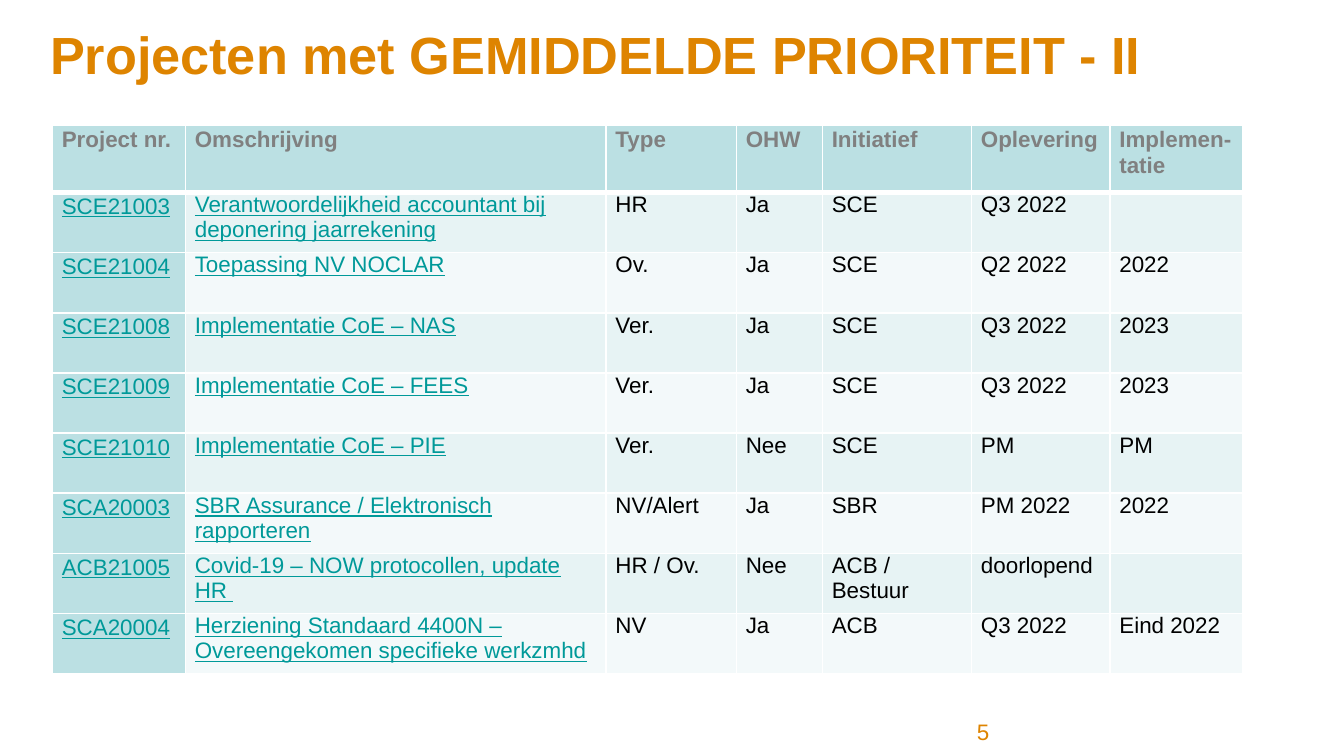
"""Build a slide listing the medium-priority projects in a table."""
from dataclasses import dataclass

from lxml import etree
from pptx import Presentation
from pptx.dml.color import RGBColor
from pptx.enum.text import MSO_ANCHOR
from pptx.oxml.ns import qn
from pptx.slide import Slide
from pptx.table import _Cell
from pptx.util import Inches, Length, Pt

MIDDLE = MSO_ANCHOR.MIDDLE
TOP = MSO_ANCHOR.TOP

WHITE = RGBColor(0xFF, 0xFF, 0xFF)
BLACK = RGBColor(0x00, 0x00, 0x00)
ORANGE = RGBColor(0xDE, 0x84, 0x00)
GRAY = RGBColor(0x80, 0x80, 0x80)
TEAL = RGBColor(0x00, 0x99, 0x99)
HEADER_FILL = RGBColor(0xBB, 0xE0, 0xE3)
ODD_FILL = RGBColor(0xE7, 0xF3, 0xF4)
EVEN_FILL = RGBColor(0xF3, 0xF9, 0xFA)

FONT = "Arial"
SLIDE_WIDTH = Inches(10)
SLIDE_HEIGHT = Length(SLIDE_WIDTH * 9 // 16)

COLUMN_PERCENTS = (9.9, 31.3, 9.7, 6.4, 11.1, 10.3, 9.9)
HEADER_PERCENT = 8.92
ROW_PERCENT = 7.96

HEADINGS = ("Project nr.", "Omschrijving", "Type", "OHW", "Initiatief", "Oplevering", "Implemen-tatie")
PROJECTS = (
    ("SCE21003", "Verantwoordelijkheid accountant bij deponering jaarrekening",
     "HR", "Ja", "SCE", "Q3 2022", ""),
    ("SCE21004", "Toepassing NV NOCLAR", "Ov.", "Ja", "SCE", "Q2 2022", "2022"),
    ("SCE21008", "Implementatie CoE – NAS", "Ver.", "Ja", "SCE", "Q3 2022", "2023"),
    ("SCE21009", "Implementatie CoE – FEES", "Ver.", "Ja", "SCE", "Q3 2022", "2023"),
    ("SCE21010", "Implementatie CoE – PIE", "Ver.", "Nee", "SCE", "PM", "PM"),
    ("SCA20003", "SBR Assurance / Elektronisch rapporteren",
     "NV/Alert", "Ja", "SBR", "PM 2022", "2022"),
    ("ACB21005", "Covid-19 – NOW protocollen, update HR ",
     "HR / Ov.", "Nee", "ACB / Bestuur", "doorlopend", ""),
    ("SCA20004", "Herziening Standaard 4400N – Overeengekomen specifieke werkzmhd",
     "NV", "Ja", "ACB", "Q3 2022", "Eind 2022"),
)


@dataclass(frozen=True)
class Box:
    """A place on the slide, in percent of its width and height."""
    left: float
    top: float
    width: float
    height: float

    def lengths(self) -> tuple[Length, Length, Length, Length]:
        """Return left, top, width and height as lengths."""
        return across(self.left), down(self.top), across(self.width), down(self.height)


@dataclass(frozen=True)
class TextStyle:
    """The look of a run of text."""
    color: RGBColor
    size: float = 12
    bold: bool = False
    underline: bool = False


@dataclass(frozen=True)
class Label:
    """A line of text with its place and style."""
    text: str
    box: Box
    style: TextStyle
    anchor: MSO_ANCHOR


HEADER_STYLE = TextStyle(GRAY, bold=True)
LINK_STYLE = TextStyle(TEAL, underline=True)
BODY_STYLE = TextStyle(BLACK)

LABELS = (
    Label("Projecten met GEMIDDELDE PRIORITEIT - II", Box(2.74, 1.78, 89.8, 10.67),
          TextStyle(ORANGE, size=28, bold=True), MIDDLE),
    Label("5", Box(71.7, 94.1, 17.7, 3.91), TextStyle(ORANGE), TOP),
)
TABLE_BOX = Box(3.9, 16.53, sum(COLUMN_PERCENTS), HEADER_PERCENT + len(PROJECTS) * ROW_PERCENT)


def across(percent: float) -> Length:
    """Return a percentage of the slide's width."""
    return Length(round(SLIDE_WIDTH * percent / 100))


def down(percent: float) -> Length:
    """Return a percentage of the slide's height."""
    return Length(round(SLIDE_HEIGHT * percent / 100))


def style_runs(paragraph, style: TextStyle) -> None:
    """Apply a text style to every run of a paragraph."""
    for run in paragraph.runs:
        run.font.name = FONT
        run.font.size = Pt(style.size)
        run.font.bold = style.bold
        run.font.underline = style.underline
        run.font.color.rgb = style.color


def draw_label(slide: Slide, label: Label) -> None:
    """Draw a text box."""
    text_frame = slide.shapes.add_textbox(*label.box.lengths()).text_frame
    text_frame.word_wrap = True
    text_frame.vertical_anchor = label.anchor
    text_frame.text = label.text
    style_runs(text_frame.paragraphs[0], label.style)


def set_borders(cell: _Cell, top: float, bottom: float) -> None:
    """Give a cell white borders, with widths in points."""
    properties = cell._tc.get_or_add_tcPr()
    widths = {"a:lnL": 1, "a:lnR": 1, "a:lnT": top, "a:lnB": bottom}
    for position, (tag, width) in enumerate(widths.items()):
        line = etree.Element(qn(tag), w=str(Pt(width)))
        fill = etree.SubElement(line, qn("a:solidFill"))
        etree.SubElement(fill, qn("a:srgbClr"), val=str(WHITE))
        properties.insert(position, line)


def draw_cell(cell: _Cell, text: str, row: int, column: int) -> None:
    """Fill in and format one table cell."""
    is_header, is_number = row == 0, column == 0
    cell.margin_left = cell.margin_right = Inches(0.07)
    cell.margin_top = cell.margin_bottom = 0
    cell.fill.solid()
    band = ODD_FILL if row % 2 else EVEN_FILL
    cell.fill.fore_color.rgb = HEADER_FILL if is_header or is_number else band
    set_borders(cell, top=3 if row == 1 else 1, bottom=3 if is_header else 1)
    cell.text_frame.text = text
    paragraph = cell.text_frame.paragraphs[0]
    if is_header or is_number:
        paragraph.line_spacing = 1.07
    if is_number and not is_header:
        properties = paragraph._p.get_or_add_pPr()
        properties.set("marL", str(Inches(0.25)))
        properties.set("indent", str(-Inches(0.25)))
    body_style = LINK_STYLE if column < 2 else BODY_STYLE
    style_runs(paragraph, HEADER_STYLE if is_header else body_style)


def draw_project_table(slide: Slide) -> None:
    """Draw the table of projects."""
    rows = (HEADINGS, *PROJECTS)
    table = slide.shapes.add_table(len(rows), len(HEADINGS), *TABLE_BOX.lengths()).table
    for column, percent in zip(table.columns, COLUMN_PERCENTS):
        column.width = across(percent)
    for row_index, texts in enumerate(rows):
        table.rows[row_index].height = down(ROW_PERCENT if row_index else HEADER_PERCENT)
        for column_index, text in enumerate(texts):
            draw_cell(table.cell(row_index, column_index), text, row_index, column_index)


def main() -> None:
    """Build and save the presentation."""
    presentation = Presentation()
    presentation.slide_width = SLIDE_WIDTH
    presentation.slide_height = SLIDE_HEIGHT
    slide = presentation.slides.add_slide(presentation.slide_layouts[6])
    for label in LABELS:
        draw_label(slide, label)
    draw_project_table(slide)
    presentation.save("out.pptx")


if __name__ == "__main__":
    main()
